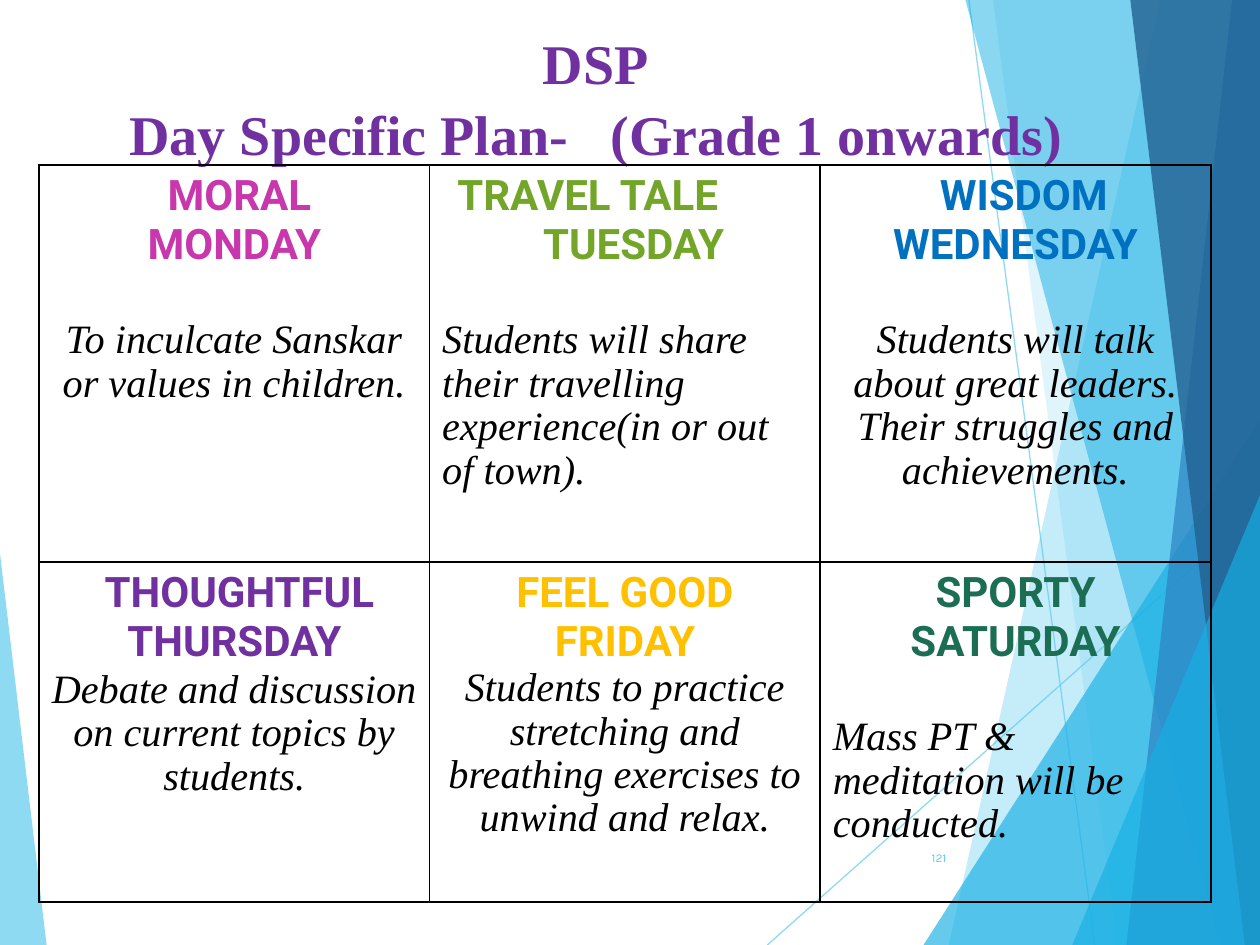
from lxml import etree
from pptx import Presentation
from pptx.dml.color import RGBColor
from pptx.enum import shapes, text
from pptx.oxml.ns import qn
from pptx.util import Inches, Pt

BLACK = RGBColor(0, 0, 0)
SKY = RGBColor(0x5F, 0xCB, 0xEF)
CYAN = RGBColor(0x17, 0xB0, 0xE4)
BLUE = RGBColor(0x2E, 0x83, 0xC3)
NAVY = RGBColor(0x22, 0x62, 0x92)
PURPLE = RGBColor(0x70, 0x30, 0xA0)
PINK = RGBColor(0xC9, 0x37, 0xAD)
GREEN = RGBColor(0x72, 0xA5, 0x28)
AZURE = RGBColor(0x00, 0x70, 0xC0)
GOLD = RGBColor(0xFF, 0xC0, 0x00)
PINE = RGBColor(0x1B, 0x6E, 0x53)
SERIF = "Times New Roman"
CENTER, LEFT, RIGHT = text.PP_ALIGN.CENTER, text.PP_ALIGN.LEFT, text.PP_ALIGN.RIGHT


def write(paragraph, words, font=SERIF, size=23, color=BLACK, bold=False,
          italic=False, align=CENTER, before=0, spacing=1.0, indent=0):
    """Add one formatted run and set the layout of its paragraph."""
    paragraph.alignment = align
    paragraph.space_before, paragraph.space_after = Pt(before), Pt(0)
    paragraph.line_spacing = spacing
    if indent:
        properties = paragraph._p.get_or_add_pPr()
        properties.set("marL", str(Inches(indent)))
        properties.set("indent", "0")
    run = paragraph.add_run()
    run.text = words
    run.font.name, run.font.size = font, Pt(size)
    run.font.bold, run.font.italic = bold, italic
    run.font.color.rgb = color
    return run


def tint(fill, color, alpha):
    """Solid fill with an opacity in percent."""
    fill.solid()
    fill.fore_color.rgb = color
    choice = fill._xPr.find(qn("a:solidFill"))[0]
    etree.SubElement(choice, qn("a:alpha"), val=str(alpha * 1000))


deck = Presentation()
deck.slide_width, deck.slide_height = Inches(10), Inches(7.5)
slide = deck.slides.add_slide(deck.slide_layouts[5])

# Thin background lines
for x1, y1, x2, y2 in [(7.69, 0, 8.69, 7.5), (10, 4.03, 6.09, 7.5)]:
    ray = slide.shapes.add_connector(shapes.MSO_CONNECTOR.STRAIGHT, Inches(x1),
                                     Inches(y1), Inches(x2), Inches(y2))
    ray.line.width = Pt(0.75)
    tint(ray.line.fill, SKY, 70)
    etree.SubElement(ray._element.spPr, qn("a:effectLst"))

# Facets, back to front: bands (top x, bottom x) reach the right edge,
# triangles have (left, top, width, height, apex)
facets = [
    ((9.21, 7.53), SKY, 36),
    ((7.88, 8.87), SKY, 20),
    ((7.33, 3.33, 2.67, 4.17, 1), CYAN, 66),
    ((7.66, 9.68), CYAN, 50),
    ((9.78, 8.94), BLUE, 70),
    ((8.97, 9.88), NAVY, 80),
    ((8.51, 3.93, 1.49, 3.57, 1), CYAN, 66),
    ((0, 4.39, 0.37, 3.11, 0), SKY, 70),
]
for geometry, color, alpha in facets:
    if len(geometry) == 2:
        top_x, bottom_x = geometry
        outline = slide.shapes.build_freeform(Inches(top_x), Inches(-0.01))
        outline.add_line_segments([(Inches(x), Inches(y)) for x, y in
                                   [(10, -0.01), (10, 7.5), (bottom_x, 7.5)]])
        facet = outline.convert_to_shape()
    else:
        *box, apex = geometry
        facet = slide.shapes.add_shape(shapes.MSO_SHAPE.ISOSCELES_TRIANGLE,
                                       *[Inches(v) for v in box])
        facet.adjustments[0] = apex
    facet.shadow.inherit = False
    facet.line.fill.background()
    tint(facet.fill, color, alpha)

# Title, brought in front of the facets
title = slide.shapes.title
slide.shapes._spTree.append(title._element)
title.left, title.top = Inches(0.28), Inches(0.15)
title.width, title.height = Inches(8.9), Inches(0.87)
heading = title.text_frame
heading.word_wrap = True
heading.auto_size = text.MSO_AUTO_SIZE.NONE
heading.vertical_anchor = text.MSO_ANCHOR.TOP
title_style = dict(size=32, color=PURPLE, bold=True, spacing=1.05)
write(heading.paragraphs[0], "DSP", **title_style)
plan = heading.add_paragraph()
write(plan, "Day Specific Plan-", **title_style)
gap = write(plan, " ", **title_style)
gap.font._element.set("spc", "1600")
write(plan, "(Grade 1 onwards)", **title_style)

# Week plan: heading lines with indents, colour, description, alignment, gap
days = [
    [([("MORAL", 0.08), ("MONDAY", 0)], PINK, CENTER,
      "To inculcate Sanskar or values in children.", CENTER, 28),
     ([("TRAVEL TALE", 0.12), ("TUESDAY", 0.8)], GREEN, LEFT,
      "Students will share their travelling experience(in or out of town).", LEFT, 28),
     ([("WISDOM", 0.13), ("WEDNESDAY", 0)], AZURE, CENTER,
      "Students will talk about great leaders. Their struggles and achievements.",
      CENTER, 28)],
    [([("THOUGHTFUL", 0.08), ("THURSDAY", 0)], PURPLE, CENTER,
      "Debate and discussion on current topics by students.", CENTER, 1),
     ([("FEEL GOOD", 0), ("FRIDAY", 0)], GOLD, CENTER,
      "Students to practice stretching and breathing exercises to unwind and relax.",
      CENTER, 0),
     ([("SPORTY", 0), ("SATURDAY", 0)], PINE, CENTER,
      "Mass PT & meditation will be conducted.", LEFT, 28)],
]
week = slide.shapes.add_table(2, 3, Inches(0.31), Inches(1.31),
                              Inches(9.3), Inches(5.85)).table
week.first_row = week.horz_banding = False
for column in week.columns:
    column.width = Inches(3.1)
for row, height in zip(week.rows, (3.15, 2.7)):
    row.height = Inches(height)

for r, row_days in enumerate(days):
    for c, (names, color, name_align, activity, align, before) in enumerate(row_days):
        cell = week.cell(r, c)
        borders = cell._tc.get_or_add_tcPr()
        for side in ("lnL", "lnR", "lnT", "lnB"):
            edge = etree.SubElement(borders, qn("a:" + side), w=str(Pt(1)))
            solid = etree.SubElement(edge, qn("a:solidFill"))
            etree.SubElement(solid, qn("a:srgbClr"), val=str(BLACK))
        cell.fill.background()
        frame = cell.text_frame
        for i, (name, indent) in enumerate(names):
            line = frame.add_paragraph() if i else frame.paragraphs[0]
            write(line, name, font="Roboto", size=24, color=color, bold=True,
                  align=name_align, indent=indent)
        write(frame.add_paragraph(), activity, italic=True, align=align,
              before=before, spacing=0.97)

# Page number
page = slide.shapes.add_textbox(Inches(7.05), Inches(6.61),
                                Inches(0.56), Inches(0.4)).text_frame
page.word_wrap = True
page.vertical_anchor = text.MSO_ANCHOR.MIDDLE
write(page.paragraphs[0], "121", font="Karla", size=6.8, color=SKY, align=RIGHT)

deck.save("out.pptx")
